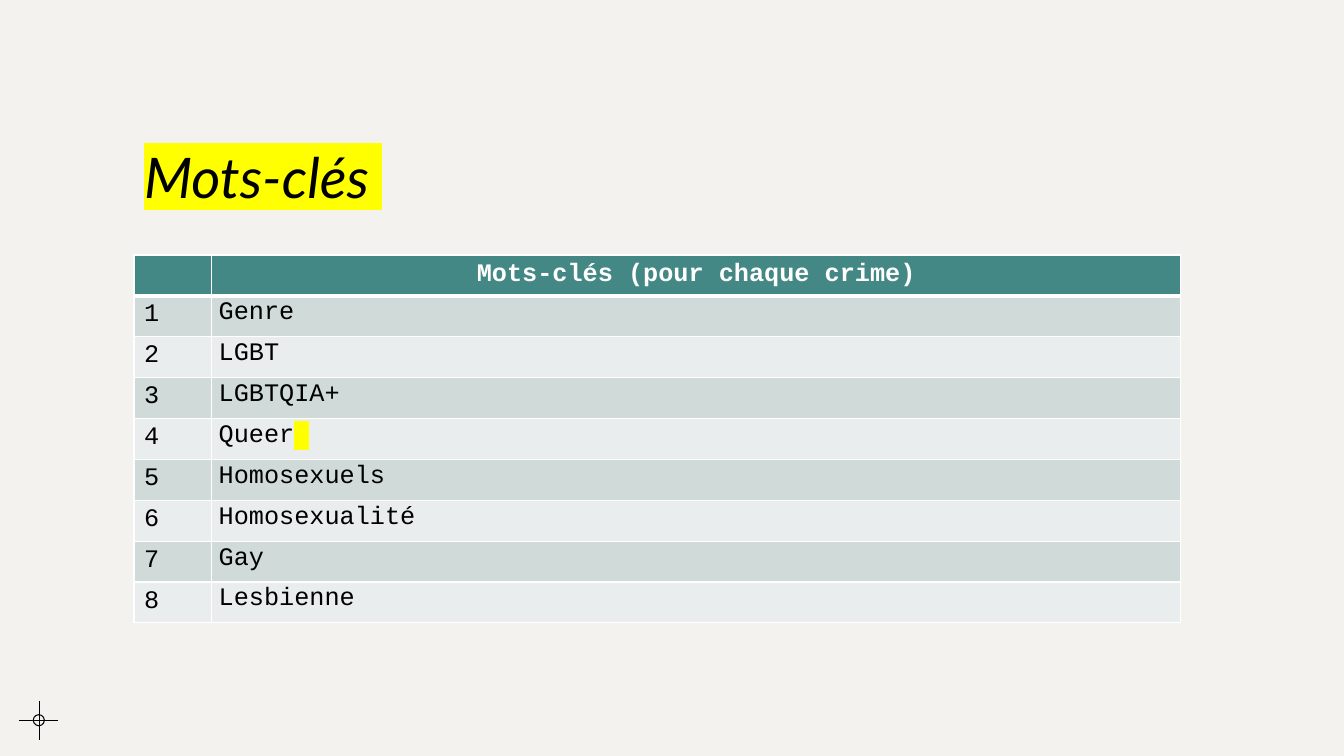
import pptx
import pptx.util
import pptx.dml.color
import pptx.enum.shapes
import pptx.enum.text
import pptx.oxml
import pptx.oxml.ns
import lxml.etree

Inches, Pt = pptx.util.Inches, pptx.util.Pt
RGB = pptx.dml.color.RGBColor.from_string
qn = pptx.oxml.ns.qn
COLORS = {
    "back": "F3F2EE", "ink": "000000", "white": "FFFFFF", "mark": "FFFF00",
    "head": "448885", "odd": "CFDAD9", "even": "E9EDED",
}
WORDS = ["Genre", "LGBT", "LGBTQIA+", "Queer", "Homosexuels",
         "Homosexualité", "Gay", "Lesbienne"]


def style(run, font, size, color, mark=False):
    """Format a run, with a yellow highlight if mark is set."""
    run.font.name = font
    run.font.size = Pt(size)
    run.font.color.rgb = RGB(COLORS[color])
    if mark:
        fill = run.font._element.find(qn("a:solidFill"))
        light = lxml.etree.Element(qn("a:highlight"))
        lxml.etree.SubElement(light, qn("a:srgbClr"), val=COLORS["mark"])
        fill.addnext(light)


def border(cell, widths):
    """Give a cell white edges; widths are points for left, right, top, bottom."""
    props = cell._tc.get_or_add_tcPr()
    for i, (side, width) in enumerate(zip("LRTB", widths)):
        edge = lxml.etree.Element(qn("a:ln" + side), w=str(Pt(width)))
        fill = lxml.etree.SubElement(edge, qn("a:solidFill"))
        lxml.etree.SubElement(fill, qn("a:srgbClr"), val=COLORS["white"])
        props.insert(i, edge)


prs = pptx.Presentation()
prs.slide_width, prs.slide_height = Inches(13.33), Inches(7.5)
slide = prs.slides.add_slide(prs.slide_layouts[6])
slide.background.fill.solid()
slide.background.fill.fore_color.rgb = RGB(COLORS["back"])

# Crosshair in the corner
cross = slide.shapes.add_group_shape().shapes
for ends in [(0.19, 7.15, 0.58, 7.15), (0.39, 7.34, 0.39, 6.95)]:
    line = cross.add_connector(pptx.enum.shapes.MSO_CONNECTOR.STRAIGHT,
                               *[Inches(v) for v in ends])
    line.line.color.rgb = RGB(COLORS["ink"])
    line.line.width = Pt(0.75)
    lxml.etree.SubElement(line._element.spPr, qn("a:effectLst"))
ring = cross.add_shape(pptx.enum.shapes.MSO_SHAPE.OVAL, Inches(0.33),
                       Inches(7.09), Inches(0.11), Inches(0.11))
ring.shadow.inherit = False
ring.fill.background()
ring.line.color.rgb = RGB(COLORS["ink"])
ring.line.width = Pt(0.75)

# Title
title = slide.shapes.add_textbox(Inches(1.33), Inches(0.4),
                                 Inches(10.38), Inches(1.73)).text_frame
title.word_wrap = True
title.vertical_anchor = pptx.enum.text.MSO_ANCHOR.BOTTOM
title.text = "Mots-clés "
title.paragraphs[0].line_spacing = 1.2
run = title.paragraphs[0].runs[0]
style(run, "Lato", 40, "ink", mark=True)
run.font.italic = True

# Keyword table
rows = [("", "Mots-clés (pour chaque crime)")]
rows += [(str(n), word) for n, word in enumerate(WORDS, 1)]
table = slide.shapes.add_table(len(rows), 2, Inches(1.33), Inches(2.53),
                               Inches(10.38), Inches(3.65)).table
table.columns[0].width = Inches(0.77)
table.columns[1].width = Inches(9.61)
for r, row in enumerate(rows):
    head = r == 0
    for c, text in enumerate(row):
        cell = table.cell(r, c)
        cell.fill.solid()
        band = "head" if head else "odd" if r % 2 else "even"
        cell.fill.fore_color.rgb = RGB(COLORS[band])
        border(cell, (1, 1, 3 if r == 1 else 1, 3 if head else 1))
        cell.text_frame.text = text
        para = cell.text_frame.paragraphs[0]
        para.font.size = Pt(18)
        if head:
            para.alignment = pptx.enum.text.PP_ALIGN.CENTER
        elif c == 1:
            para.line_spacing = 1.07
            cell.margin_left, cell.margin_right = Inches(0.07), Inches(0.08)
            cell.margin_top, cell.margin_bottom = Inches(0.01), Inches(0)
        for run in para.runs:
            style(run, "Courier New", 18, "white" if head else "ink")
            run.font.bold = head
        if text == "Queer":
            gap = para.add_run()
            gap.text = " "
            style(gap, "Courier New", 18, "ink", mark=True)

prs.save("out.pptx")
